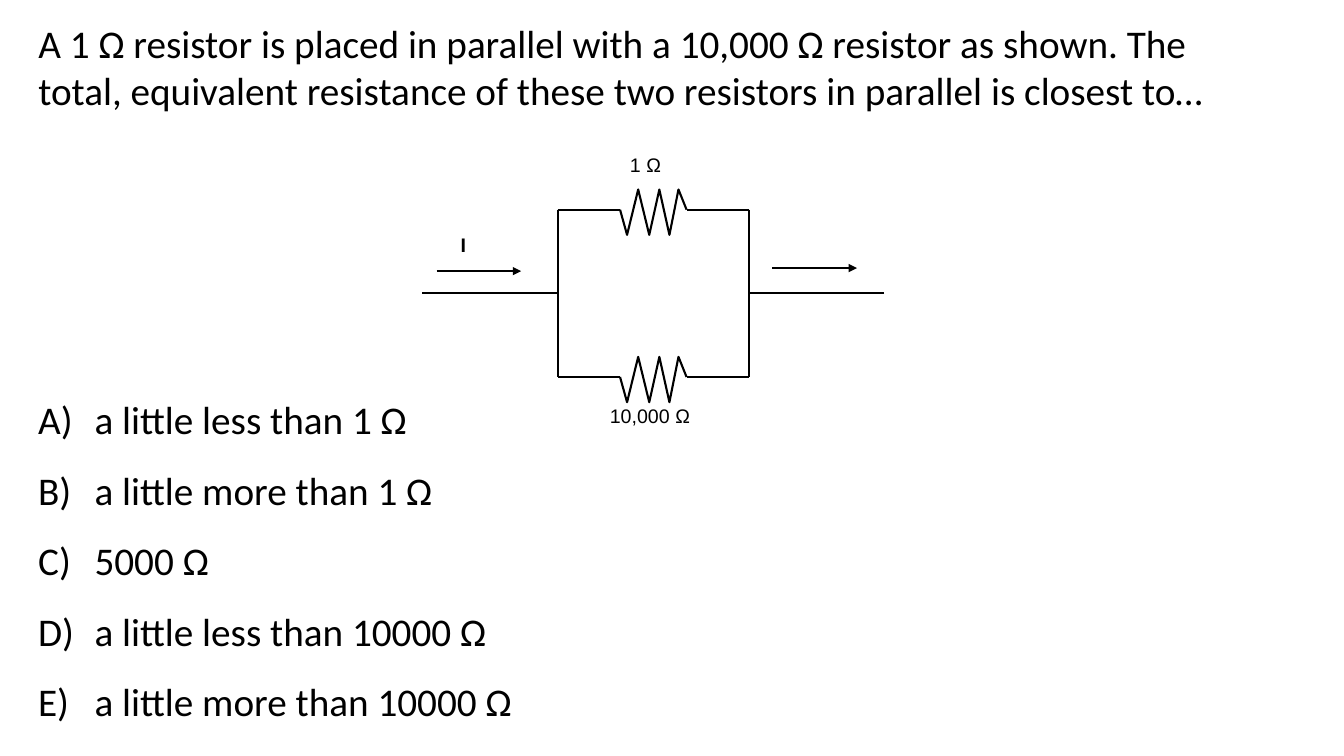
from lxml.etree import SubElement
from pptx import Presentation
from pptx.dml.color import RGBColor
from pptx.enum.shapes import MSO_CONNECTOR
from pptx.enum.text import MSO_ANCHOR, MSO_AUTO_SIZE, PP_ALIGN
from pptx.oxml.ns import qn
from pptx.util import Inches, Pt

BLACK = RGBColor(0, 0, 0)
QUESTION = (
    "A 1 Ω resistor is placed in parallel with a 10,000 Ω resistor as shown. "
    "The total, equivalent resistance of these two resistors in parallel is closest to…"
)
ANSWERS = [
    "a little less than 1 Ω",
    "a little more than 1 Ω",
    "5000 Ω",
    "a little less than 10000 Ω",
    "a little more than 10000 Ω",
]
# text, bold, left, top, width
LABELS = [
    ("I", True, 4.47, 2.26, 0.38),
    ("1 Ω", False, 6.15, 1.47, 0.76),
    ("10,000 Ω", False, 5.95, 3.96, 1.51),
]

# Circuit, in inches
LEFT, RIGHT = 5.53, 7.43
TOP, MIDDLE, BOTTOM = 2.08, 2.91, 3.74
RESISTOR_LEFT, RESISTOR_RIGHT = 6.15, 6.81
LEAD = 1.34
ARROW_LENGTH = 0.84
ARROWS = [(4.33, 2.69), (7.66, 2.66)]
# Zigzag corners, measured from the left end of a resistor
ZIGZAG = [(0, 0), (0.07, 0.25), (0.18, -0.2), (0.29, 0.25), (0.39, -0.2),
          (0.49, 0.25), (0.58, -0.2), (0.66, 0)]


def style_line(shape):
    shape.line.color.rgb = BLACK
    shape.line.width = Pt(1.5)


def add_wire(page, x1, y1, x2, y2, arrow=False):
    wire = page.shapes.add_connector(
        MSO_CONNECTOR.STRAIGHT, Inches(x1), Inches(y1), Inches(x2), Inches(y2))
    style_line(wire)
    if arrow:
        SubElement(wire.line._get_or_add_ln(), qn("a:tailEnd"), type="triangle")
    SubElement(wire._element.spPr, qn("a:effectLst"))


def add_resistor(page, y):
    corners = [(Inches(RESISTOR_LEFT + dx), Inches(y + dy)) for dx, dy in ZIGZAG]
    builder = page.shapes.build_freeform(*corners[0])
    builder.add_line_segments(corners[1:], close=False)
    resistor = builder.convert_to_shape()
    resistor.fill.background()
    resistor.shadow.inherit = False
    style_line(resistor)


def style_font(para, name, size):
    para.font.name = name
    para.font.size = Pt(size)
    para.font.color.rgb = BLACK


def add_circuit(page):
    for y in (TOP, BOTTOM):
        add_wire(page, LEFT, y, RESISTOR_LEFT, y)
        add_resistor(page, y)
        add_wire(page, RESISTOR_RIGHT, y, RIGHT, y)
    for x, outer_x in ((LEFT, LEFT - LEAD), (RIGHT, RIGHT + LEAD)):
        add_wire(page, x, TOP, x, BOTTOM)
        add_wire(page, outer_x, MIDDLE, x, MIDDLE)
    for x, y in ARROWS:
        add_wire(page, x, y, x + ARROW_LENGTH, y, arrow=True)
    for text, bold, left, top, width in LABELS:
        box = page.shapes.add_textbox(
            Inches(left), Inches(top), Inches(width), Inches(0.38))
        box.text_frame.word_wrap = True
        para = box.text_frame.paragraphs[0]
        para.text = text
        style_font(para, "Arial", 14)
        para.font.bold = bold


def add_question(page):
    title = page.shapes.title
    title.left, title.top = Inches(0.28), Inches(0.14)
    title.width, title.height = Inches(12.38), Inches(1.04)
    frame = title.text_frame
    frame.text = QUESTION
    frame.word_wrap = True
    frame.auto_size = MSO_AUTO_SIZE.SHAPE_TO_FIT_TEXT
    frame.vertical_anchor = MSO_ANCHOR.MIDDLE
    para = frame.paragraphs[0]
    para.alignment = PP_ALIGN.LEFT
    style_font(para, "Calibri", 28)


def add_answers(page):
    box = page.shapes.add_textbox(
        Inches(0.28), Inches(3.64), Inches(4.96), Inches(3.64))
    frame = box.text_frame
    frame.word_wrap = False
    frame.auto_size = MSO_AUTO_SIZE.SHAPE_TO_FIT_TEXT
    frame.text = "\n".join(ANSWERS)
    for para in frame.paragraphs:
        para.line_spacing = 1.5
        style_font(para, "Calibri", 28)
        properties = para._p.get_or_add_pPr()
        properties.set("marL", str(Inches(0.56)))
        properties.set("indent", str(-Inches(0.56)))
        numbering = properties.makeelement(
            qn("a:buAutoNum"), {"type": "alphaUcParenR"})
        properties.find(qn("a:defRPr")).addprevious(numbering)


def main():
    deck = Presentation()
    deck.slide_width, deck.slide_height = Inches(13.33), Inches(7.5)
    page = deck.slides.add_slide(deck.slide_layouts[5])
    add_circuit(page)
    add_question(page)
    add_answers(page)
    deck.save("out.pptx")


if __name__ == "__main__":
    main()
